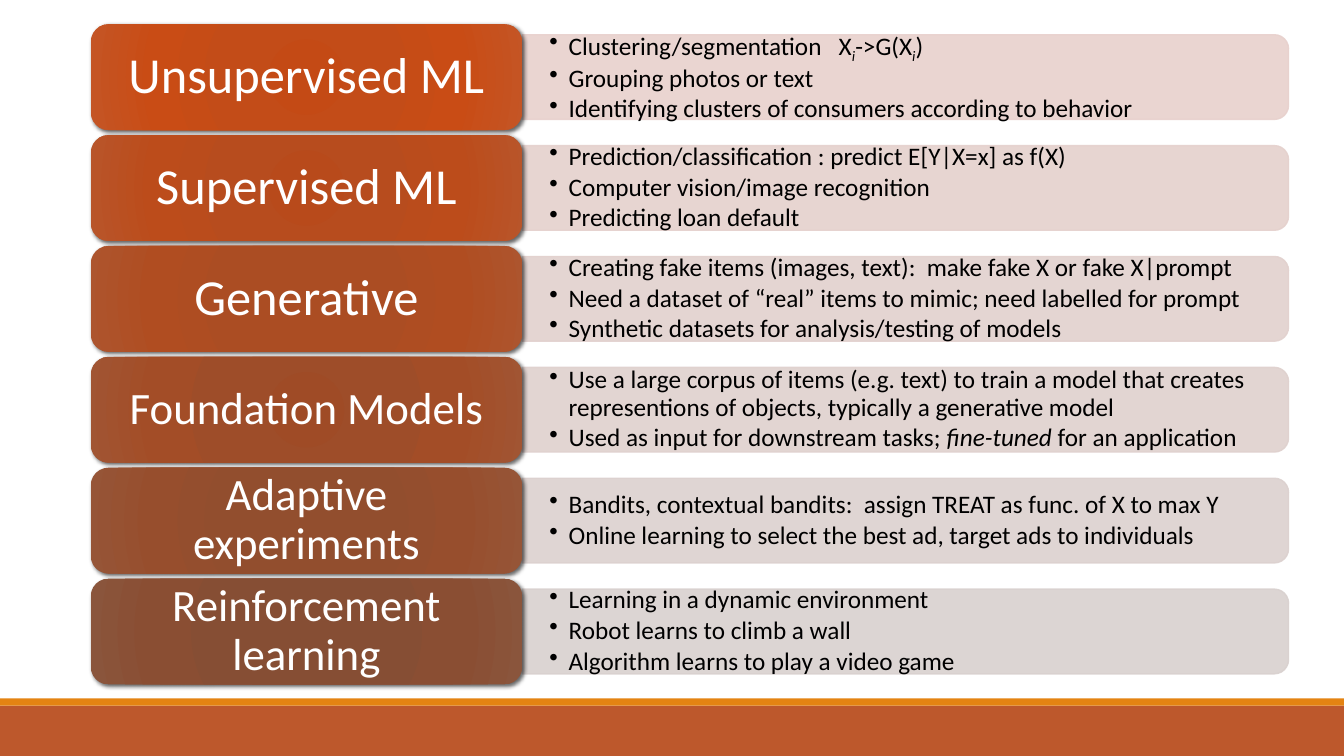
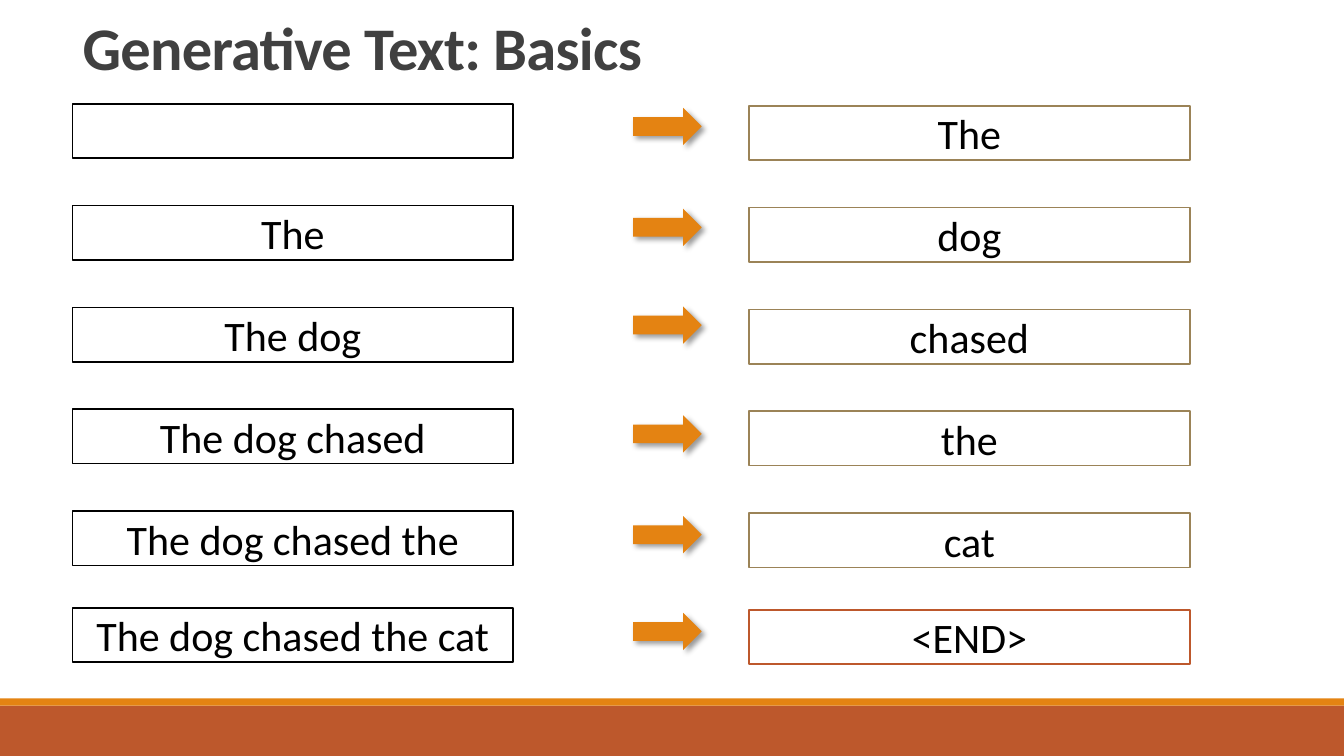
from dataclasses import dataclass

from pptx import Presentation
from pptx.dml.color import RGBColor
from pptx.enum.shapes import MSO_SHAPE as Preset
from pptx.enum.text import MSO_ANCHOR as Anchor, MSO_AUTO_SIZE as AutoSize, PP_ALIGN as Align
from pptx.oxml import parse_xml
from pptx.oxml.ns import nsdecls, qn
from pptx.util import Inches, Pt


@dataclass(frozen=True)
class Theme:
    """Colours and type sizes of the deck."""

    font: str = "Calibri"
    rust: str = "BD582C"
    orange: str = "E48312"
    tan: str = "9B8357"
    title: str = "404040"
    black: str = "000000"
    white: str = "FFFFFF"
    bar_ends: tuple = ("E8D1CD", "D9D1CF")
    header_stops: tuple = (
        (0, "C44A15", "874C32"),
        (34, "C34C18", "864E34"),
        (70, "C94C15", "8A4E33"),
        (100, "C45525", "8A553C"),
    )
    title_size: float = 43.2
    word_size: int = 30
    bullet_size: int = 18


THEME = Theme()

METHODS = [
    ("Unsupervised ML", 36, [
        [("Clustering/segmentation   X", ""), ("i", "sub"), ("->G(X", ""), ("i", "sub"), (")", "")],
        "Grouping photos or text",
        "Identifying clusters of consumers according to behavior",
    ]),
    ("Supervised ML", 36, [
        "Prediction/classification : predict E[Y|X=x] as f(X)",
        "Computer vision/image recognition",
        "Predicting loan default",
    ]),
    ("Generative", 36, [
        "Creating fake items (images, text):  make fake X or fake X|prompt",
        "Need a dataset of “real” items to mimic; need labelled for prompt",
        "Synthetic datasets for analysis/testing of models",
    ]),
    ("Foundation Models", 32, [
        "Use a large corpus of items (e.g. text) to train a model that creates "
        "representions of objects, typically a generative model",
        [("Used as input for downstream tasks; ", ""), ("fine-tuned", "italic"),
         (" for an application", "")],
    ]),
    ("Adaptive experiments", 32, [
        "Bandits, contextual bandits:  assign TREAT as func. of X to max Y",
        "Online learning to select the best ad, target ads to individuals",
    ]),
    ("Reinforcement learning", 32, [
        "Learning in a dynamic environment",
        "Robot learns to climb a wall",
        "Algorithm learns to play a video game",
    ]),
]

WORDS = ["The", "dog", "chased", "the", "cat", "<END>"]
WORD_TOPS = [1.03, 2.04, 3.05, 4.06, 5.07, 6.03]
ARROW_TOPS = [1.07, 2.07, 3.04, 4.12, 5.12, 6.08]


def blend(first, last, share):
    """Return the colour that lies at a share of the way between two others."""
    pairs = zip(bytes.fromhex(first), bytes.fromhex(last))
    return "".join(f"{round(a + (b - a) * share):02X}" for a, b in pairs)


def add_box(page, preset, box, fill, line=None, width=1.25):
    """Add a flat preset shape at box (left, top, width, height in inches)."""
    shape = page.shapes.add_shape(preset, *map(Inches, box))
    shape.shadow.inherit = False
    shape.fill.solid()
    shape.fill.fore_color.rgb = RGBColor.from_string(fill)
    if line:
        shape.line.color.rgb = RGBColor.from_string(line)
        shape.line.width = Pt(width)
    else:
        shape.line.fill.background()
    return shape


def add_shadow(shape, opacity, blur, distance):
    """Give a shape a black shadow towards the lower right."""
    effects = shape.element.spPr.find(qn("a:effectLst"))
    effects.append(parse_xml(
        f'<a:outerShdw {nsdecls("a")} blurRad="{Pt(blur)}" dist="{Pt(distance)}" '
        f'dir="2700000" algn="ctr" rotWithShape="0"><a:srgbClr val="{THEME.black}">'
        f'<a:alpha val="{opacity * 1000}"/></a:srgbClr></a:outerShdw>'))


def set_opacity(shape, percent):
    """Make the fill and line colours of a shape partly transparent."""
    for colour in shape.element.spPr.iter(qn("a:srgbClr")):
        colour.append(parse_xml(f'<a:alpha {nsdecls("a")} val="{percent * 1000}"/>'))


def set_radial_fill(shape, stops):
    """Replace the solid fill of a shape with a circular gradient."""
    marks = "".join(f'<a:gs pos="{place * 1000}"><a:srgbClr val="{colour}"/></a:gs>'
                    for place, colour in stops)
    solid = shape.element.spPr.find(qn("a:solidFill"))
    solid.getparent().replace(solid, parse_xml(
        f'<a:gradFill {nsdecls("a")} rotWithShape="1"><a:gsLst>{marks}</a:gsLst>'
        '<a:path path="circle"><a:fillToRect l="100000" t="100000" r="100000" b="100000"/>'
        '</a:path></a:gradFill>'))


def set_margins(frame, side, end):
    """Set the side and the top and bottom margins of a text frame."""
    frame.margin_left = frame.margin_right = Inches(side)
    frame.margin_top = frame.margin_bottom = Inches(end)


def style_span(span, size, colour):
    """Apply the deck font with a size and colour."""
    span.font.name = THEME.font
    span.font.size = Pt(size)
    span.font.color.rgb = RGBColor.from_string(colour)


def write_centred(shape, text, size, colour):
    """Write one centred paragraph into a shape and return it."""
    frame = shape.text_frame
    frame.word_wrap = True
    frame.vertical_anchor = Anchor.MIDDLE
    frame.text = text
    para = frame.paragraphs[0]
    para.alignment = Align.CENTER
    style_span(para.runs[0], size, colour)
    return para


def write_bullet(para, content):
    """Fill a paragraph with a bullet given as text or as styled parts."""
    para.line_spacing = 0.9
    para.space_after = Pt(2.5)
    properties = para._p.get_or_add_pPr()
    properties.set("marL", str(Inches(0.19)))
    properties.set("indent", str(-Inches(0.19)))
    properties.append(parse_xml(f'<a:buChar {nsdecls("a")} char="•"/>'))
    parts = [(content, "")] if isinstance(content, str) else content
    for text, style in parts:
        span = para.add_run()
        span.text = text
        style_span(span, THEME.bullet_size, THEME.black)
        if style:
            span.font.italic = True
        if style == "sub":
            span._r.get_or_add_rPr().set("baseline", "-25000")


def add_bullets(page, box, bullets):
    """Add a text box that holds a bulleted list."""
    frame = page.shapes.add_textbox(*map(Inches, box)).text_frame
    frame.word_wrap = True
    frame.auto_size = AutoSize.NONE
    frame.vertical_anchor = Anchor.MIDDLE
    set_margins(frame, 0.27, 0.14)
    for index, content in enumerate(bullets):
        write_bullet(frame.add_paragraph() if index else frame.paragraphs[0], content)


def add_method(page, box, share, name, size, bullets):
    """Add one row: a shaded header and a pale bar with its bullets."""
    left, top, width, height = box
    header_width, bar_height = 4.28, 0.84
    bar_left, bar_width = left + header_width, width - header_width
    middle = top + height / 2
    bar_box = (bar_left + (bar_width - bar_height) / 2, middle - bar_width / 2,
               bar_height, bar_width)
    tint = blend(*THEME.bar_ends, share)
    bar = add_box(page, Preset.ROUND_2_SAME_RECTANGLE, bar_box, tint, tint, 1)
    bar.rotation = 90
    set_opacity(bar, 90)
    add_bullets(page, (bar_left, middle - 0.38, bar_width - 0.04, 0.76), bullets)

    header = add_box(page, Preset.ROUNDED_RECTANGLE, (left, top, header_width, height), THEME.rust)
    set_radial_fill(header, [(place, blend(first, last, share))
                             for place, first, last in THEME.header_stops])
    add_shadow(header, 60, 3, 2)
    set_margins(header.text_frame, 0.15, 0.07)
    write_centred(header, name, size, THEME.white).line_spacing = 0.9


def build_methods(page, box):
    """Stack the method rows at an equal pitch inside the box."""
    left, top, width, height = box
    row_height = 1.05
    pitch = (height - row_height) / (len(METHODS) - 1)
    for index, method in enumerate(METHODS):
        row = (left, top + index * pitch, width, row_height)
        add_method(page, row, index / (len(METHODS) - 1), *method)


def set_title(page, box, text):
    """Place and format the title placeholder."""
    title = page.shapes.title
    title.left, title.top, title.width, title.height = map(Inches, box)
    frame = title.text_frame
    frame.text = text
    frame.auto_size = AutoSize.NONE
    frame.vertical_anchor = Anchor.BOTTOM
    para = frame.paragraphs[0]
    para.alignment = Align.LEFT
    para.line_spacing = 0.85
    span = para.runs[0]
    style_span(span, THEME.title_size, THEME.title)
    span.font.bold = True
    span._r.get_or_add_rPr().set("spc", "-50")


def add_word_box(page, box, text, line):
    """Add an outlined white box with an optional text."""
    shape = add_box(page, Preset.RECTANGLE, box, THEME.white, line)
    if text:
        write_centred(shape, text, THEME.word_size, THEME.black)


def build_generation(page, left):
    """Show how each prompt leads to the next word."""
    width, height = 4.37, 0.54
    for index, (word, top, arrow_top) in enumerate(zip(WORDS, WORD_TOPS, ARROW_TOPS)):
        prompt = " ".join(WORDS[:index])
        outline = THEME.rust if word == WORDS[-1] else THEME.tan
        add_word_box(page, (left, top, width, height), prompt, THEME.black)
        add_word_box(page, (left + 6.71, top + 0.02, width, height), word, outline)
        arrow = add_box(page, Preset.RIGHT_ARROW, (left + 5.56, arrow_top, 0.68, 0.37), THEME.orange)
        add_shadow(arrow, 40, 4, 3)


def add_master_bands(deck, page):
    """Draw the footer bands and move them from the page to the master."""
    bands = [((0, 7, 13.33, 0.5), THEME.rust), ((0, 6.93, 13.33, 0.07), THEME.orange)]
    for index, (box, colour) in enumerate(bands):
        band = add_box(page, Preset.RECTANGLE, box, colour)
        band.element.nvSpPr.cNvPr.set("id", str(101 + index))
        deck.slide_master.shapes.element.insert(2 + index, band.element)


def main():
    """Build the deck and save it."""
    deck = Presentation()
    deck.slide_width, deck.slide_height = Inches(13.33), Inches(7.5)
    methods_page = deck.slides.add_slide(deck.slide_layouts[6])
    add_master_bands(deck, methods_page)
    build_methods(methods_page, (0.9, 0.24, 11.88, 6.55))

    text_page = deck.slides.add_slide(deck.slide_layouts[5])
    set_title(text_page, (0.72, 0.25, 11, 0.62), "Generative Text: Basics")
    build_generation(text_page, 0.72)
    deck.save("out.pptx")


if __name__ == "__main__":
    main()
